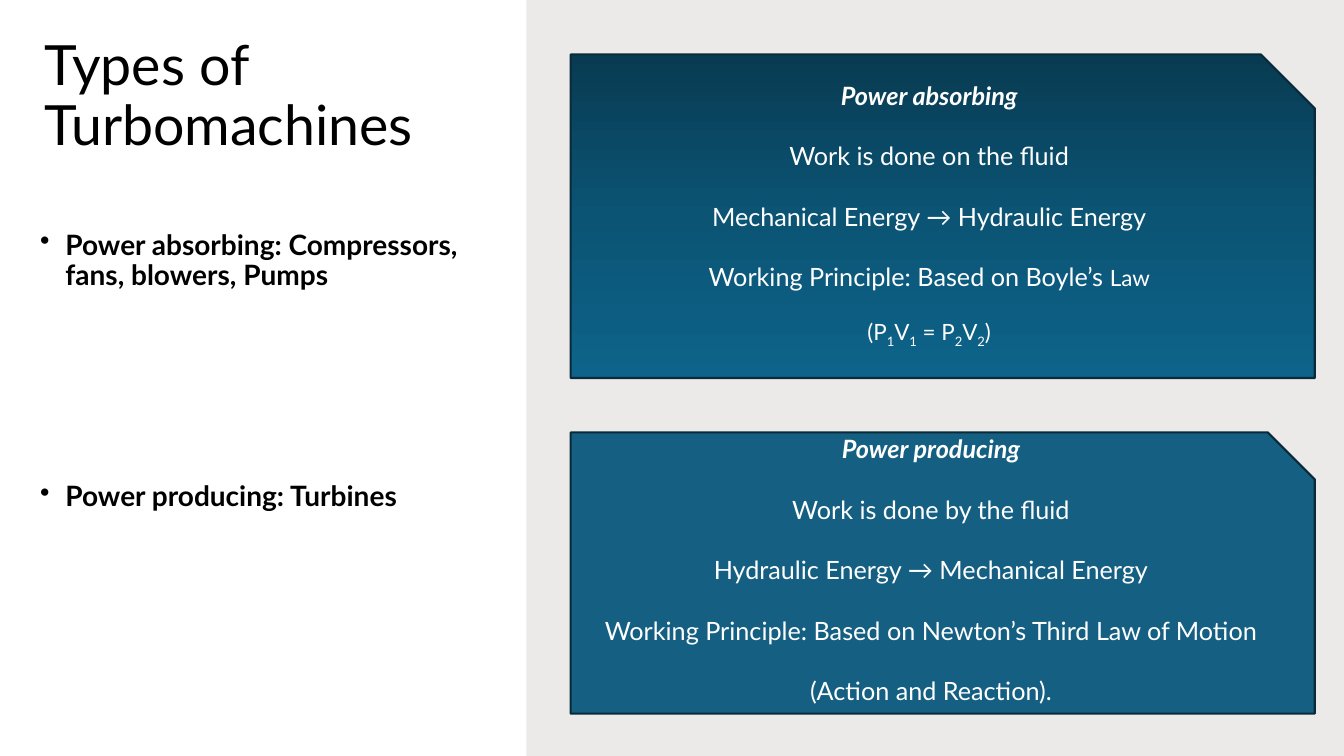
from copy import deepcopy
from dataclasses import dataclass

from lxml import etree
from pptx import Presentation
from pptx.dml.color import RGBColor
from pptx.enum.shapes import MSO_SHAPE
from pptx.enum.text import MSO_ANCHOR, PP_ALIGN
from pptx.oxml.ns import qn
from pptx.util import Inches, Pt

RECT = MSO_SHAPE.RECTANGLE
SNIP = MSO_SHAPE.SNIP_1_RECTANGLE
TOP, MIDDLE = MSO_ANCHOR.TOP, MSO_ANCHOR.MIDDLE
LEFT, CENTER = PP_ALIGN.LEFT, PP_ALIGN.CENTER


@dataclass(frozen=True)
class Theme:
    font: str = "Lato"
    black: str = "000000"
    white: str = "FFFFFF"
    panel: str = "82766A"
    edge: str = "092A39"
    flat: tuple = ("156082",)
    fade: tuple = ("083B52", "0B5474", "0D638A")
    title: float = 39.6
    bullet: float = 20
    body: float = 18
    small: float = 16


THEME = Theme()
TITLE = "Types of Turbomachines"
BULLETS = [
    ("Power absorbing: Compressors, fans, blowers, Pumps", 0),
    ("Power producing: Turbines", 136.4),
]
ABSORB = [
    "Power absorbing",
    "Work is done on the fluid",
    "Mechanical Energy → Hydraulic Energy",
    ("Working Principle: Based on Boyle’s ", "Law"),
]
FORMULA = ["(P", "1", "V", "1", " = P", "2", "V", "2", ")"]
PRODUCE = [
    "Power producing",
    "Work is done by the fluid",
    "Hydraulic Energy → Mechanical Energy",
    "Working Principle: Based on Newton’s Third Law of Motion",
    "(Action and Reaction).",
]
CARDS = [
    (0.54, 3.21, THEME.fade, ABSORB, FORMULA),
    (4.29, 2.79, THEME.flat, PRODUCE, []),
]
CARD_X, CARD_W = 5.66, 7.38
LEAD = 1.2


def rgb(code):
    return RGBColor.from_string(code)


def block(slide, kind, x, y, w, h):
    shape = slide.shapes.add_shape(kind, *map(Inches, (x, y, w, h)))
    shape.shadow.inherit = False
    return shape


def paint(shape, codes):
    fill = shape.fill
    if len(codes) == 1:
        fill.solid()
        fill.fore_color.rgb = rgb(codes[0])
        return
    fill.gradient()
    fill.gradient_angle = 270
    first = next(shape._element.spPr.iter(qn("a:gs")))
    first.addnext(deepcopy(first))
    for i, (stop, code) in enumerate(zip(fill.gradient_stops, codes)):
        stop.position = i / (len(codes) - 1)
        stop.color.rgb = rgb(code)


def frame(shape, anchor, top=0.05, bottom=0.05):
    text = shape.text_frame
    text.word_wrap = True
    text.vertical_anchor = anchor
    text.margin_top, text.margin_bottom = Inches(top), Inches(bottom)
    return text


def line(text, first, parts, size, color, align, gap=0):
    para = text.paragraphs[0] if first else text.add_paragraph()
    para.alignment = align
    para.space_before = Pt(gap)
    para.font.name = THEME.font
    para.font.size = Pt(size)
    para.font.color.rgb = rgb(color)
    for part in parts:
        para.add_run().text = part
    return para


def label(slide, x, y, w, h, anchor, top):
    box = slide.shapes.add_textbox(*map(Inches, (x, y, w, h)))
    return frame(box, anchor, top)


def panels(slide):
    for x, w, code, alpha in [(0, 13.33, THEME.white, 100), (5.22, 8.12, THEME.panel, 15)]:
        shape = block(slide, RECT, x, 0, w, 7.5)
        paint(shape, (code,))
        shape.line.fill.background()
        if alpha < 100:
            color = next(shape._element.spPr.iter(qn("a:srgbClr")))
            etree.SubElement(color, qn("a:alpha")).set("val", str(alpha * 1000))


def left(slide):
    text = label(slide, 0.34, 0.1, 4.62, 1.13, MIDDLE, 0.65)
    line(text, True, [TITLE], THEME.title, THEME.black, LEFT).line_spacing = 0.9
    text = label(slide, 0.3, 1.8, 4.41, 5.03, TOP, 0.49)
    for i, (words, gap) in enumerate(BULLETS):
        para = line(text, i == 0, [words], THEME.bullet, THEME.black, LEFT, gap)
        para.line_spacing = 0.9
        para.font.bold = True
        props = para._p.get_or_add_pPr()
        props.set("marL", str(Inches(0.25)))
        props.set("indent", str(-Inches(0.25)))
        mark = etree.Element(qn("a:buChar"), char="•")
        props.find(qn("a:defRPr")).addprevious(mark)


def card(slide, y, h, codes, rows, formula):
    shape = block(slide, SNIP, CARD_X, y, CARD_W, h)
    paint(shape, codes)
    shape.line.color.rgb = rgb(THEME.edge)
    shape.line.width = Pt(1.5)
    text = frame(shape, MIDDLE, bottom=0.35)
    for i, row in enumerate(rows):
        parts = [row] if isinstance(row, str) else row
        gap = THEME.body * LEAD if i else 0
        para = line(text, i == 0, parts, THEME.body, THEME.white, CENTER, gap)
        if i == 0:
            para.font.bold = para.font.italic = True
        for run in para.runs[1:]:
            run.font.size = Pt(THEME.small)
    if formula:
        para = line(text, False, formula, THEME.small, THEME.white, CENTER, THEME.small * LEAD)
        for run in para.runs:
            if run.text.isdigit():
                run._r.get_or_add_rPr().set("baseline", "-25000")


def main():
    deck = Presentation()
    deck.slide_width, deck.slide_height = Inches(13.33), Inches(7.5)
    slide = deck.slides.add_slide(deck.slide_layouts[6])
    panels(slide)
    left(slide)
    for item in CARDS:
        card(slide, *item)
    deck.save("out.pptx")


if __name__ == "__main__":
    main()
